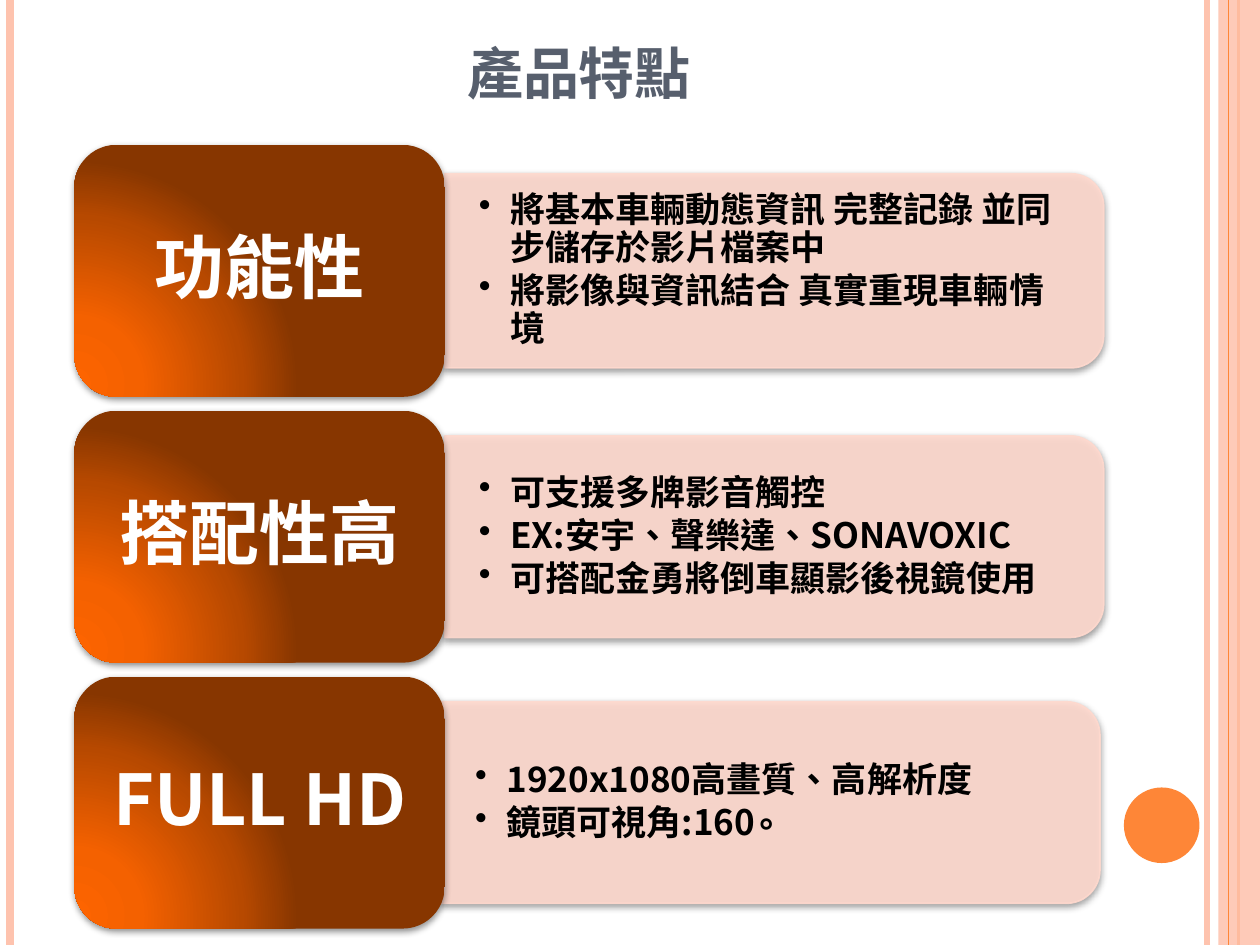
from lxml import etree
from pptx import Presentation
from pptx import util as u
from pptx.dml.color import RGBColor
from pptx.enum import shapes, text
from pptx.oxml import parse_xml
from pptx.oxml.ns import qn

W, H = 10, 7.5
FONT = "Noto Sans CJK SC"
NS = 'xmlns:a="http://schemas.openxmlformats.org/drawingml/2006/main"'
COLORS = {"title": "575F6D", "label": "FFFFFF", "point": "000000",
          "panel": "FFD9CE", "stripe": "FEC3AE", "accent": "FE8637"}
GLOW = [(0, "FD6400"), (30, "F46100"), (75, "B74900"), (100, "873600")]
SHADOW = (f'<a:effectLst {NS}><a:outerShdw blurRad="50800" dist="20320" dir="5400000" rotWithShape="0">'
          '<a:srgbClr val="000000"><a:alpha val="42000"/></a:srgbClr></a:outerShdw></a:effectLst>')


def write(frame, lines, size, color, align=text.PP_ALIGN.CENTER, anchor=text.MSO_ANCHOR.MIDDLE,
          margins=(0.1, 0.05), spacing=None, after=None, bullet=None, small_caps=False):
    frame.word_wrap = True
    frame.auto_size = text.MSO_AUTO_SIZE.NONE
    frame.vertical_anchor = anchor
    frame.margin_left = frame.margin_right = u.Inches(margins[0])
    frame.margin_top = frame.margin_bottom = u.Inches(margins[1])
    for i, line in enumerate(lines):
        p = frame.add_paragraph() if i else frame.paragraphs[0]
        p.alignment, p.line_spacing = align, spacing
        if after is not None:
            p.space_after = u.Pt(after)
        if bullet:
            ppr = p._p.get_or_add_pPr()
            ppr.set("marL", str(u.Inches(0.25)))
            ppr.set("indent", str(-u.Inches(0.25)))
            etree.SubElement(ppr, qn("a:buChar")).set("char", bullet)
        run = p.add_run()
        run.text = line
        run.font.size, run.font.bold, run.font.name = u.Pt(size), True, FONT
        run.font.color.rgb = RGBColor.from_string(COLORS[color])
        rpr = run._r.get_or_add_rPr()
        rpr.set("lang", "zh-TW")
        if small_caps:
            rpr.set("cap", "small")
        etree.SubElement(rpr, qn("a:ea")).set("typeface", FONT)


def paint(shape, color, alpha=100, outline=False):
    """Fill a shape, with an optional outline of the same colour and opacity."""
    shape.shadow.inherit = False
    shape.fill.solid()
    shape.fill.fore_color.rgb = RGBColor.from_string(COLORS[color])
    if outline:
        shape.line.width = u.Pt(1)
        shape.line.color.rgb = RGBColor.from_string(COLORS[color])
    else:
        shape.line.fill.background()
    for clr in shape._element.spPr.iter(qn("a:srgbClr")):
        etree.SubElement(clr, qn("a:alpha")).set("val", str(alpha * 1000))


deck = Presentation()
deck.slide_width, deck.slide_height = u.Inches(W), u.Inches(H)
slide = deck.slides.add_slide(deck.slide_layouts[5])
parts = slide.shapes

# Stripes along the edges; the band lies over all but the last of them
for x, color, weight in [(9.58, "stripe", 3), (0.08, "stripe", 4.5),
                         (9.83, "accent", 1.5), (9.75, "accent", 0.75)]:
    if x == 9.75:
        band = parts.add_shape(shapes.MSO_SHAPE.RECTANGLE, u.Inches(9.67), 0, u.Inches(0.33), u.Inches(H))
        paint(band, "stripe", alpha=87)
    stripe = parts.add_connector(shapes.MSO_CONNECTOR.STRAIGHT, u.Inches(x), 0, u.Inches(x), u.Inches(H))
    stripe.line.width = u.Pt(weight)
    stripe.line.color.rgb = RGBColor.from_string(COLORS[color])
    etree.SubElement(stripe._element.spPr, qn("a:effectLst"))
dot = parts.add_shape(shapes.MSO_SHAPE.OVAL, u.Inches(8.92), u.Inches(6.25), u.Inches(0.6), u.Inches(0.6))
paint(dot, "accent")

# Title
title = parts.title
title.left, title.top, title.width, title.height = (u.Inches(v) for v in (0.51, -0.34, 8.17, 1.25))
write(title.text_frame, ["產品特點"], 40, "title", anchor=text.MSO_ANCHOR.BOTTOM, small_caps=True)

# Feature rows: label, left edge and depth of the panel, points
features = [
    ("功能性", 3.53, 1.54, ["將基本車輛動態資訊 完整記錄 並同步儲存於影片檔案中",
                         "將影像與資訊結合 真實重現車輛情境"]),
    ("搭配性高", 3.53, 1.6, ["可支援多牌影音觸控", "EX:安宇、聲樂達、SONAVOXIC",
                         "可搭配金勇將倒車顯影後視鏡使用"]),
    ("FULL HD", 3.5, 1.6, ["1920x1080高畫質、高解析度", "鏡頭可視角:160∘"]),
]
FIRST_MIDDLE, PITCH = 2.15, 2.11
CARD_LEFT, CARD_W, CARD_H = 0.59, 2.94, 2
PANEL_LEN, POINTS_W = 5.23, 5.15

for row, (label, left, depth, points) in enumerate(features):
    middle = FIRST_MIDDLE + row * PITCH

    # Panel stands upright and is turned so that its round corners face right
    panel = parts.add_shape(shapes.MSO_SHAPE.ROUND_2_SAME_RECTANGLE,
                            u.Inches(left + (PANEL_LEN - depth) / 2), u.Inches(middle - PANEL_LEN / 2),
                            u.Inches(depth), u.Inches(PANEL_LEN))
    panel.rotation = 90
    paint(panel, "panel", alpha=90, outline=True)

    points_h = depth - 0.15
    points_box = parts.add_textbox(u.Inches(left), u.Inches(middle - points_h / 2),
                                   u.Inches(POINTS_W), u.Inches(points_h))
    write(points_box.text_frame, points, 20, "point", align=text.PP_ALIGN.LEFT,
          margins=(0.27, 0.14), spacing=0.9, after=3, bullet="•")

    # Card with a glow from its lower left corner
    card = parts.add_shape(shapes.MSO_SHAPE.ROUNDED_RECTANGLE, u.Inches(CARD_LEFT),
                           u.Inches(middle - CARD_H / 2), u.Inches(CARD_W), u.Inches(CARD_H))
    paint(card, "accent")
    stops = "".join(f'<a:gs pos="{pos * 1000}"><a:srgbClr val="{c}"/></a:gs>' for pos, c in GLOW)
    glow = parse_xml(f'<a:gradFill {NS} rotWithShape="1"><a:gsLst>{stops}</a:gsLst><a:path path="circle">'
                     '<a:fillToRect l="5000" t="100000" r="120000" b="10000"/></a:path></a:gradFill>')
    card_props = card._element.spPr
    card_props.replace(card_props.find(qn("a:solidFill")), glow)
    write(card.text_frame, [label], 40, "label", margins=(0.17, 0.08), spacing=0.9)

    for shape in (panel, card):
        props = shape._element.spPr
        props.replace(props.find(qn("a:effectLst")), parse_xml(SHADOW))

deck.save("out.pptx")
